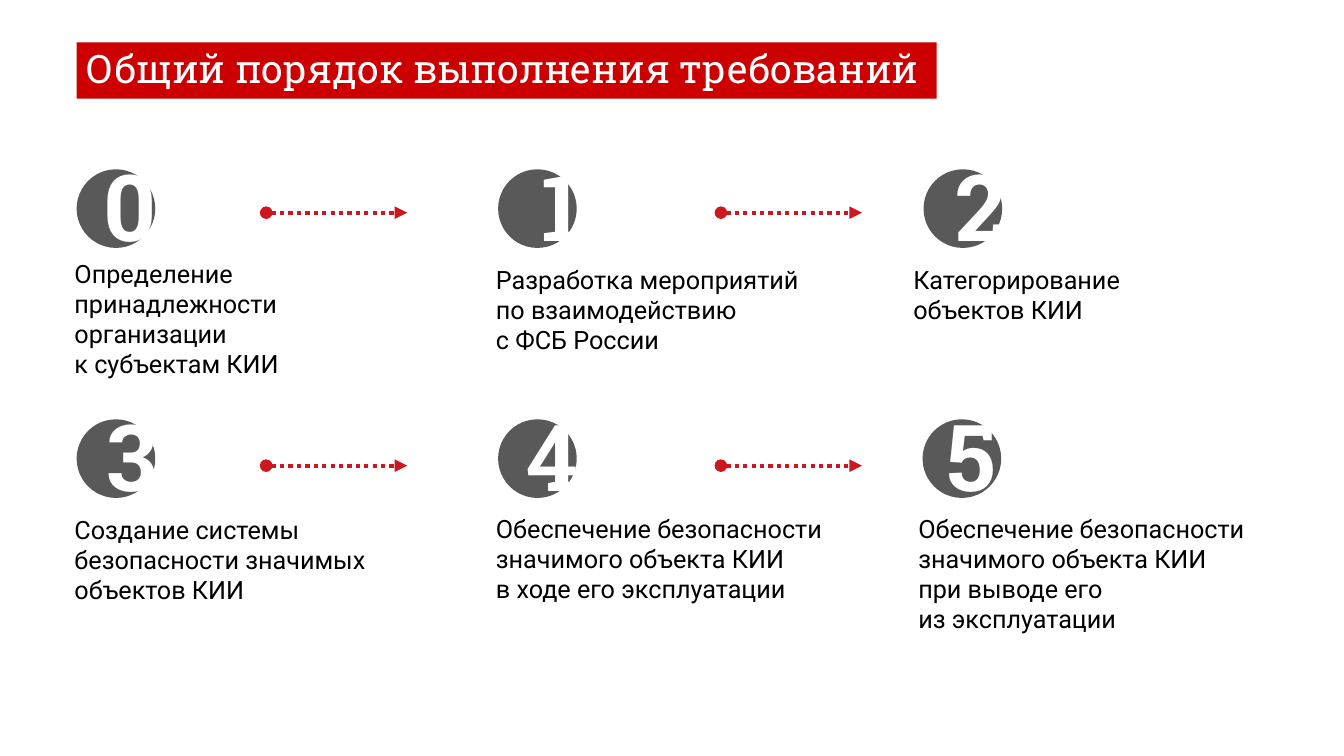
from lxml import etree
from pptx import Presentation
from pptx.dml.color import RGBColor
from pptx.enum import dml, shapes, text
from pptx.oxml import ns
from pptx.util import Inches, Pt

RED = RGBColor(0xCC, 0x00, 0x00)
ARROW = RGBColor(0xCC, 0x17, 0x1E)
GRAY = RGBColor(0x59, 0x59, 0x59)
WHITE = RGBColor(0xFF, 0xFF, 0xFF)
BLACK = RGBColor(0x00, 0x00, 0x00)

TITLE = "Общий порядок выполнения требований"

# Steps in order: label, label box (left, top, width, height), disc left, digit left
STEPS = [
    ("Определение принадлежности организации \vк субъектам КИИ",
     (0.64, 2.51, 3.49, 1.31), 0.76, 0.93),
    ("Разработка мероприятий \vпо взаимодействию \vс ФСБ России",
     (4.82, 2.57, 3.79, 1.01), 4.94, 5.27),
    ("Категорирование объектов КИИ",
     (8.96, 2.57, 2.51, 0.71), 9.16, 9.38),
    ("Создание системы безопасности значимых объектов КИИ",
     (0.64, 5.05, 3.65, 1.01), 0.76, 0.96),
    ("Обеспечение безопасности значимого объекта КИИ \vв ходе его эксплуатации",
     (4.82, 5.04, 3.79, 1.01), 4.94, 5.12),
    ("Обеспечение безопасности значимого объекта КИИ \vпри выводе его \vиз эксплуатации",
     (9.01, 5.04, 3.5, 1.31), 9.15, 9.29),
]
COLS = 3
DISC = 0.78
DISC_TOPS = [1.68, 4.16]
DIGIT_RISE = 0.25
ARROW_LEFTS = [2.64, 7.15]
ARROW_TOPS = [2.11, 4.62]
ARROW_LEN = 1.4


def style(par, size, face, color, bold=False):
    for run in par.runs:
        font = run.font
        font.size, font.name, font.bold = Pt(size), face, bold
        font.color.rgb = color


def label(slide, words, box, size, face, color, bold=False):
    frame = slide.shapes.add_textbox(*map(Inches, box)).text_frame
    frame.word_wrap = True
    par = frame.paragraphs[0]
    par.text = words
    style(par, size, face, color, bold)


def disc(slide, left, top):
    oval = slide.shapes.add_shape(
        shapes.MSO_SHAPE.OVAL, *map(Inches, (left, top, DISC, DISC)))
    oval.shadow.inherit = False
    oval.fill.solid()
    oval.fill.fore_color.rgb = GRAY
    oval.line.fill.background()


def arrow(slide, left, top):
    link = slide.shapes.add_connector(
        shapes.MSO_CONNECTOR.STRAIGHT,
        *map(Inches, (left, top, left + ARROW_LEN, top)))
    link.line.color.rgb = ARROW
    link.line.width = Pt(3)
    link.line.dash_style = dml.MSO_LINE.ROUND_DOT
    line = link.line._get_or_add_ln()
    for tag, kind in (("a:headEnd", "oval"), ("a:tailEnd", "triangle")):
        etree.SubElement(line, ns.qn(tag), type=kind)
    etree.SubElement(line.getparent(), ns.qn("a:effectLst"))


def main():
    deck = Presentation()
    deck.slide_width, deck.slide_height = Inches(13.33), Inches(7.5)
    slide = deck.slides.add_slide(deck.slide_layouts[5])

    # Title on a red bar
    title = slide.shapes.title
    title.left, title.top = Inches(0.76), Inches(0.42)
    title.width, title.height = Inches(8.53), Inches(0.56)
    title.fill.solid()
    title.fill.fore_color.rgb = RED
    frame = title.text_frame
    frame.text = TITLE
    frame.word_wrap = True
    frame.auto_size = text.MSO_AUTO_SIZE.NONE
    frame.vertical_anchor = text.MSO_ANCHOR.MIDDLE
    par = frame.paragraphs[0]
    par.alignment = text.PP_ALIGN.LEFT
    par.line_spacing = 0.9
    style(par, 28, "Roboto Slab", WHITE)

    # Numbered steps
    for num, (words, box, left, digit) in enumerate(STEPS):
        top = DISC_TOPS[num // COLS]
        label(slide, words, box, 18, "Roboto", BLACK)
        disc(slide, left, top)
        label(slide, str(num), (digit, top - DIGIT_RISE, 0.67, 1.21),
              66, "Roboto Slab", WHITE, True)

    # Dotted arrows between the steps
    for top in ARROW_TOPS:
        for left in ARROW_LEFTS:
            arrow(slide, left, top)

    deck.save("out.pptx")


if __name__ == "__main__":
    main()
